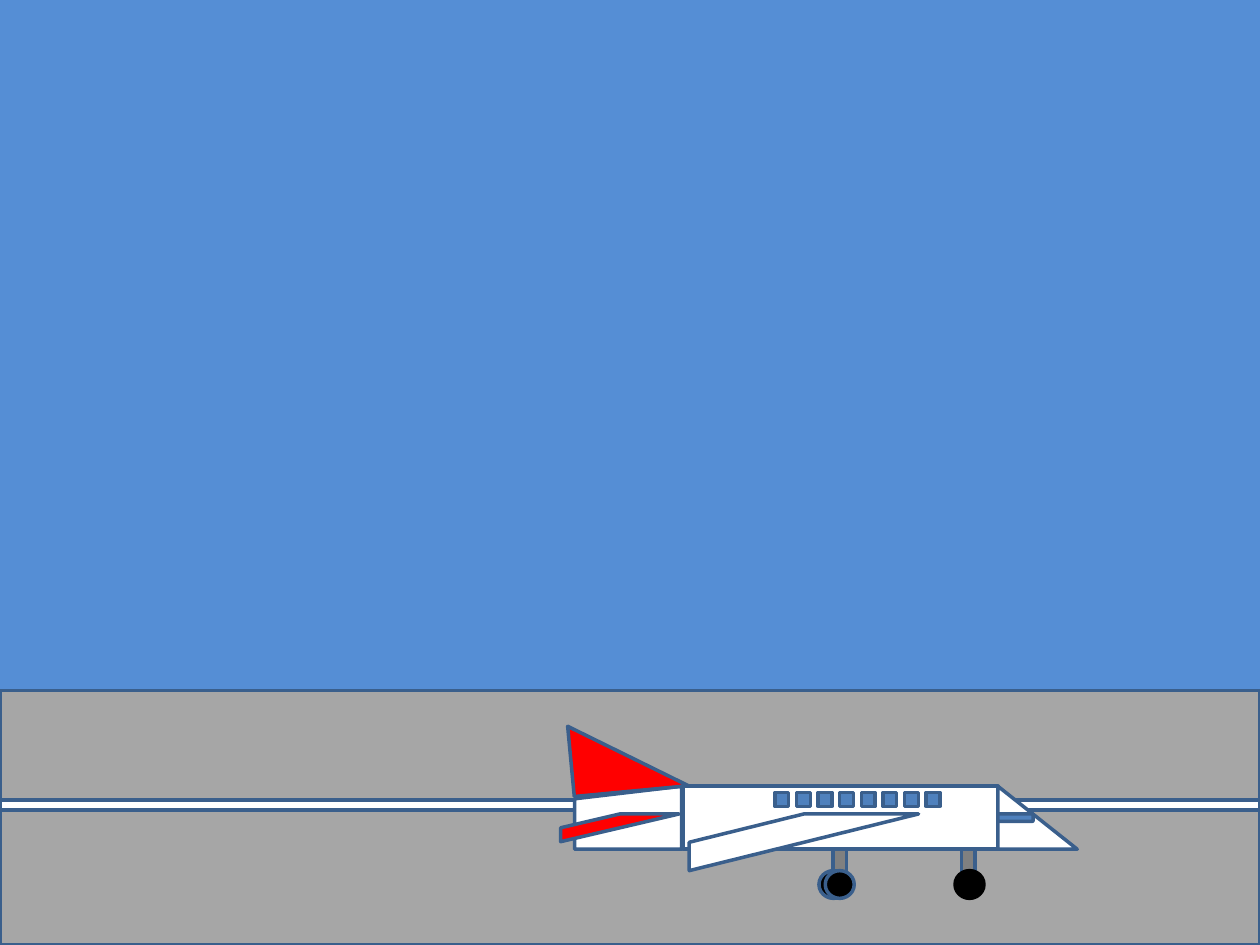
from pptx import Presentation
from pptx.dml.color import RGBColor
from pptx.enum.shapes import MSO_SHAPE as Preset
from pptx.util import Inches, Pt

COLORS = {
    "sky": "558ED5",
    "tarmac": "A6A6A6",
    "white": "FFFFFF",
    "outline": "3A5F8C",
    "strut": "808080",
    "black": "000000",
    "red": "FF0000",
    "glass": "4F81BD",
}
WINDOW_COUNT = 8
WINDOW_SIZE = 0.11
WINDOW_PITCH = 1.2 / (WINDOW_COUNT - 1)


def add_part(shapes, preset, box, fill, line="outline", rotation=0):
    shape = shapes.add_shape(preset, *(Inches(length) for length in box))
    shape.shadow.inherit = False
    shape.fill.solid()
    shape.fill.fore_color.rgb = RGBColor.from_string(COLORS[fill])
    shape.line.color.rgb = RGBColor.from_string(COLORS[line])
    shape.line.width = Pt(2)
    shape.rotation = rotation
    return shape


def add_runway(slide, left, top, width, height):
    add_part(slide.shapes, Preset.RECTANGLE, (left, top, width, height), "tarmac")
    add_part(slide.shapes, Preset.RECTANGLE, (left, top + 0.87, width, 0.08), "white")


def add_airplane(slide, left, top):
    shapes = slide.shapes.add_group_shape().shapes

    def part(preset, x, y, width, height, fill, **style):
        add_part(shapes, preset, (left + x, top + y, width, height), fill, **style)

    def landing_gear(strut_x, wheel_xs, line):
        part(Preset.RECTANGLE, strut_x, 1.02, 0.11, 0.22, "strut")
        for wheel_x in wheel_xs:
            part(Preset.OVAL, wheel_x, 1.19, 0.23, 0.22, "black", line=line)

    part(Preset.RECTANGLE, 0.97, 0.52, 2.5, 0.5, "white")
    part(Preset.RIGHT_TRIANGLE, 3.47, 0.52, 0.63, 0.5, "white")
    part(Preset.DIAGONAL_STRIPE, 1.02, 0.74, 1.82, 0.45, "white")
    landing_gear(3.18, [3.13], "black")
    landing_gear(2.16, [2.05, 2.1], "outline")
    part(Preset.FLOWCHART_MANUAL_INPUT, 0.11, 0.52, 0.85, 0.5, "white")
    part(Preset.RIGHT_TRIANGLE, 0.08, 0, 0.91, 0.56, "red", rotation=354.6)
    for index in range(WINDOW_COUNT):
        x = 1.7 + index * WINDOW_PITCH
        part(Preset.RECTANGLE, x, 0.57, WINDOW_SIZE, WINDOW_SIZE, "glass")
    part(Preset.ROUNDED_RECTANGLE, 3.47, 0.74, 0.28, 0.06, "glass")
    part(Preset.DIAGONAL_STRIPE, 0, 0.74, 0.94, 0.22, "red")


def main():
    presentation = Presentation()
    presentation.slide_width = Inches(10)
    presentation.slide_height = Inches(7.5)
    slide = presentation.slides.add_slide(presentation.slide_layouts[6])
    slide.background.fill.solid()
    slide.background.fill.fore_color.rgb = RGBColor.from_string(COLORS["sky"])
    add_runway(slide, 0, 5.48, 10, 2.02)
    add_airplane(slide, 4.45, 5.72)
    presentation.save("out.pptx")


if __name__ == "__main__":
    main()
